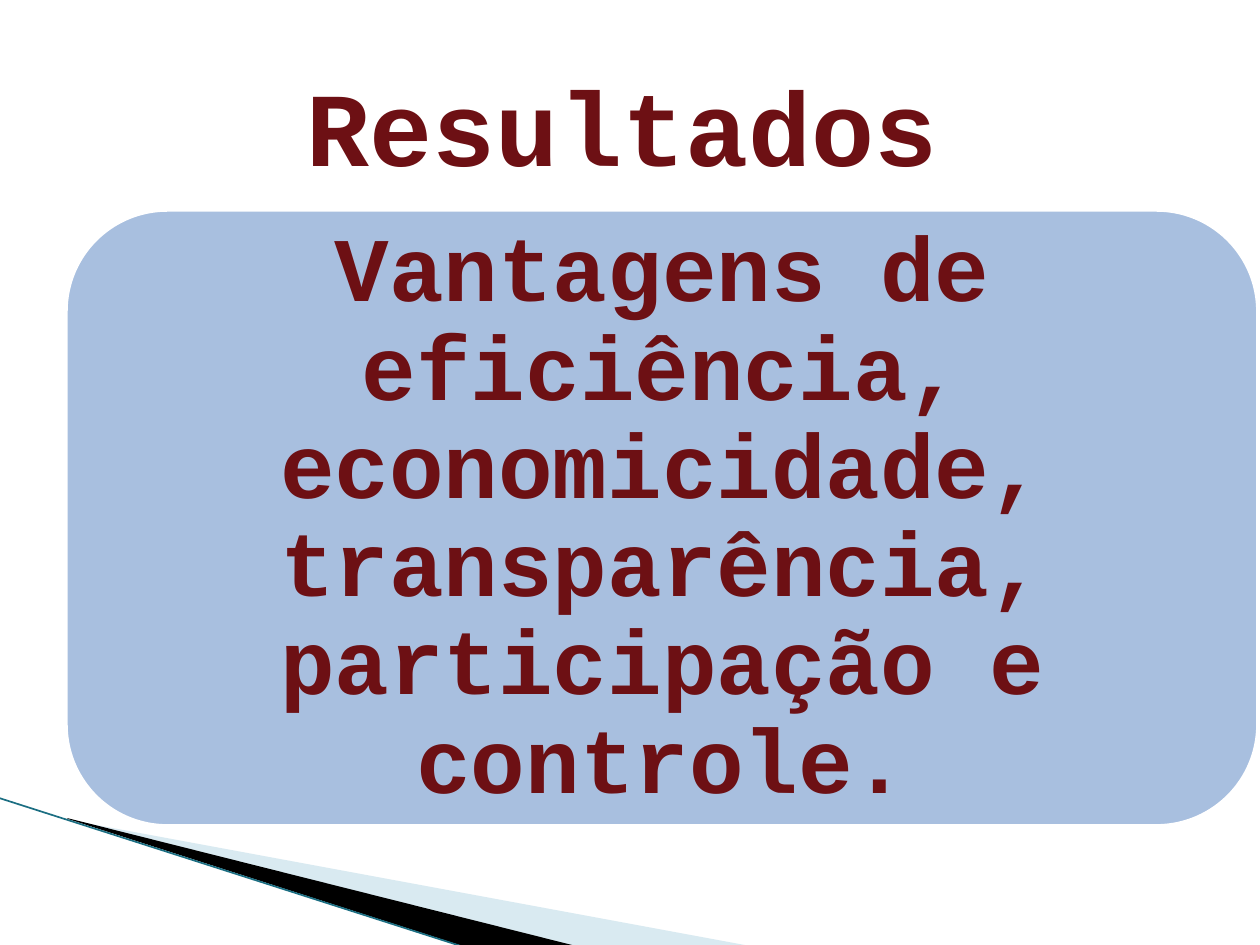
from lxml.etree import SubElement
from pptx import Presentation
from pptx.dml.color import RGBColor
from pptx.enum.shapes import MSO_CONNECTOR, MSO_SHAPE
from pptx.enum.text import MSO_ANCHOR, PP_ALIGN
from pptx.oxml.ns import qn
from pptx.util import Pt

PX = 914400 / 126
COLORS = {"wine": "6D1014", "panel": "A8BFDF", "white": "FFFFFF",
          "pale": "A0CBDC", "black": "000000", "teal": "1B6E82"}


def emu(*vals):
    return [round(v * PX) for v in vals]


def color(name):
    return RGBColor.from_string(COLORS[name])


def paint(shape, fill, line=None, width=0, alpha=None):
    """Set fill and outline; alpha is the opacity in percent."""
    shape.shadow.inherit = False
    shape.fill.solid()
    shape.fill.fore_color.rgb = color(fill)
    if alpha:
        tone = shape.fill._xPr.find(qn("a:solidFill"))[0]
        SubElement(tone, qn("a:alpha"), val=str(alpha * 1000))
    if line:
        shape.line.color.rgb = color(line)
        shape.line.width = Pt(width)
    else:
        shape.line.fill.background()


def add_wedge(slide, points, fill, alpha=None):
    start, *rest = points
    form = slide.shapes.build_freeform(*start, scale=PX)
    form.add_line_segments(rest, close=True)
    paint(form.convert_to_shape(), fill, alpha=alpha)


def add_edge(slide, start, end, tone, width):
    edge = slide.shapes.add_connector(
        MSO_CONNECTOR.STRAIGHT, *emu(*start, *end))
    edge.line.color.rgb = color(tone)
    edge.line.width = Pt(width)
    SubElement(edge._element.spPr, qn("a:effectLst"))


def add_panel(slide, box):
    panel = slide.shapes.add_shape(MSO_SHAPE.ROUNDED_RECTANGLE, *emu(*box))
    paint(panel, "panel", "white", 4.33)


def add_text(slide, text, box, size, inset=(13, 6), spacing=1.0):
    frame = slide.shapes.add_textbox(*emu(*box)).text_frame
    frame.word_wrap = True
    frame.vertical_anchor = MSO_ANCHOR.MIDDLE
    frame.margin_left = frame.margin_right = emu(inset[0])[0]
    frame.margin_top = frame.margin_bottom = emu(inset[1])[0]
    para = frame.paragraphs[0]
    para.alignment = PP_ALIGN.CENTER
    para.line_spacing = spacing
    run = para.add_run()
    run.text = text
    run.font.name = "Courier New"
    run.font.size = Pt(size)
    run.font.bold = True
    run.font.color.rgb = color("wine")


def main():
    deck = Presentation()
    deck.slide_width, deck.slide_height = emu(1260, 945)
    slide = deck.slides.add_slide(deck.slide_layouts[6])

    add_wedge(slide, [(69, 820), (750, 946), (575, 946), (69, 819)],
              "pale", alpha=40)
    add_wedge(slide, [(67, 818), (576, 946), (469, 948), (68, 819)], "black")
    add_edge(slide, (-1, 798), (467, 948), "teal", 0.95)

    add_panel(slide, (64, 208, 1196, 620))
    add_text(slide, "Vantagens de eficiência, economicidade, "
             "transparência, participação e controle.",
             (94, 238, 1136, 560), 52, inset=(28, 28), spacing=0.9)
    add_text(slide, "Resultados", (59, 45, 1126, 159), 60)
    deck.save("out.pptx")


if __name__ == "__main__":
    main()
